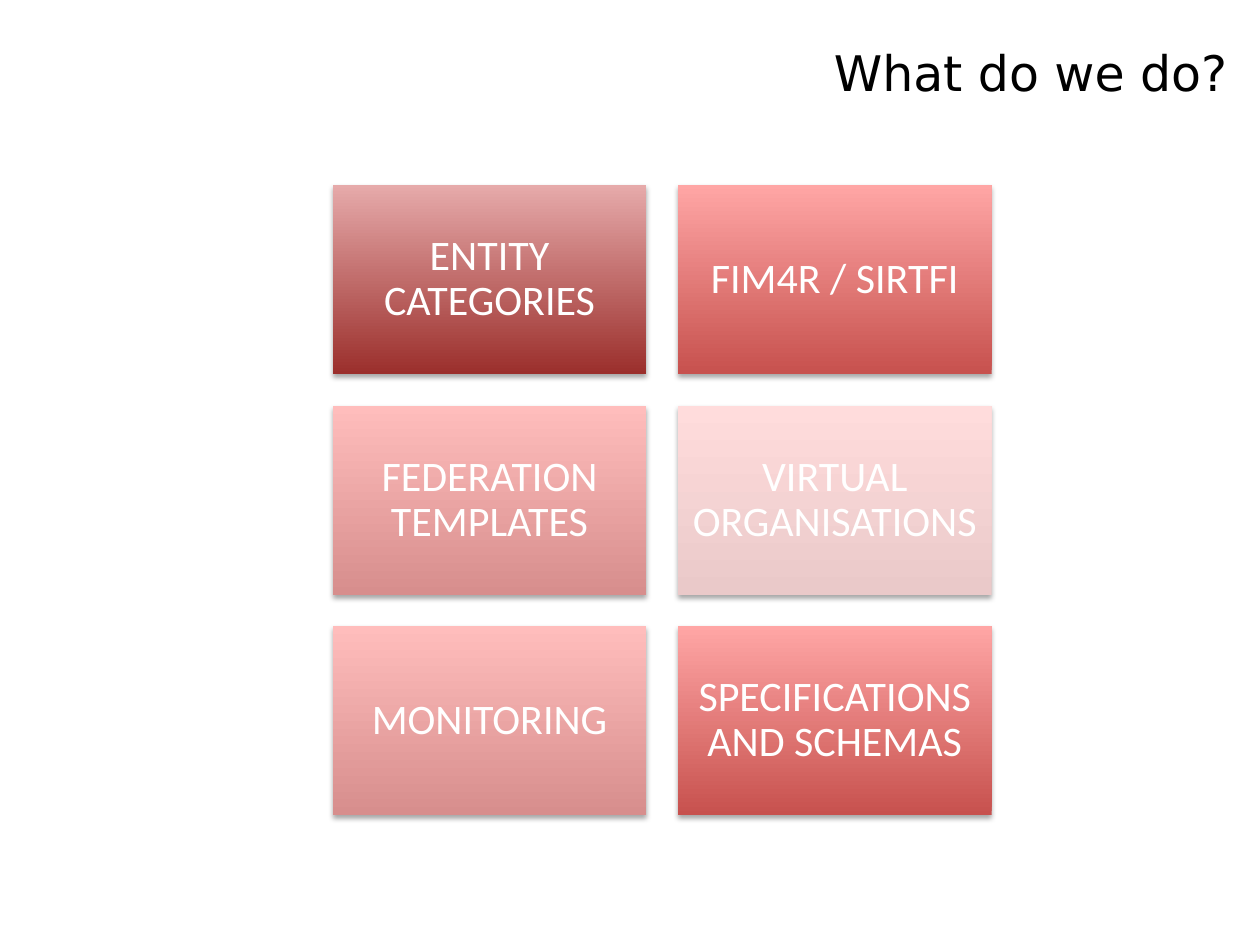
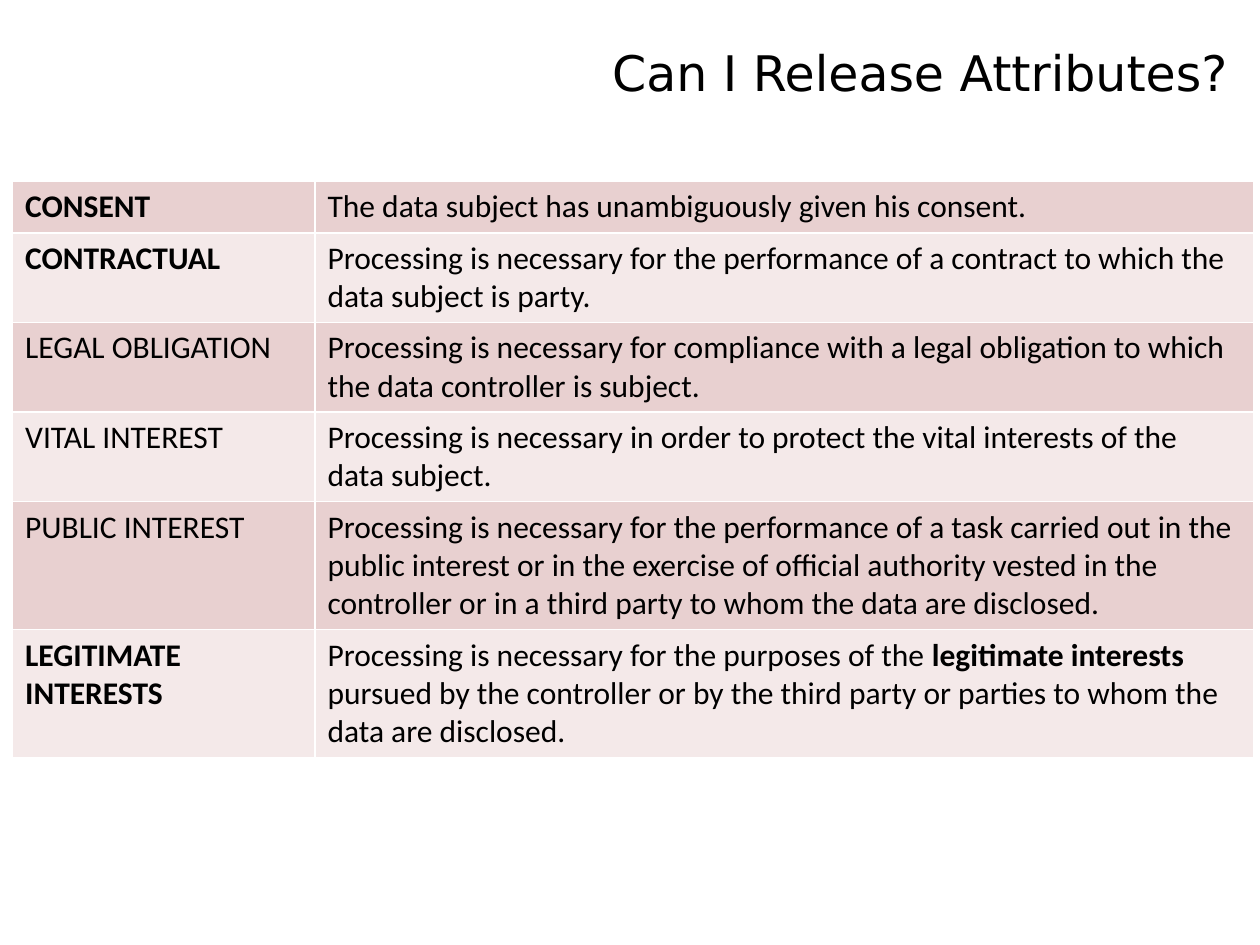
from dataclasses import dataclass

from lxml import etree
from pptx import Presentation
from pptx.dml.color import RGBColor
from pptx.enum.shapes import MSO_SHAPE
from pptx.enum.text import MSO_ANCHOR, MSO_AUTO_SIZE, PP_ALIGN
from pptx.oxml import parse_xml
from pptx.oxml.ns import nsdecls, qn
from pptx.util import Inches, Pt

RECTANGLE = MSO_SHAPE.RECTANGLE
TOP, MIDDLE = MSO_ANCHOR.TOP, MSO_ANCHOR.MIDDLE
CENTER, RIGHT = PP_ALIGN.CENTER, PP_ALIGN.RIGHT
NO_AUTOFIT = MSO_AUTO_SIZE.NONE

TITLE_FONT, BODY_FONT = "DejaVu Sans", "Calibri"
BLACK, WHITE = "000000", "FFFFFF"
ROW_FILLS = ("E8D0D0", "F4E9E9")

DARK = ("9B2F2C", "E6AAAA")
STRONG = ("C7514E", "FFA6A5")
SOFT = ("D78E8D", "FFBDBC")
PALE = ("EAC9C9", "FFDCDC")

TILE_COLUMNS = 2
TILE_LEFT, TILE_TOP = 2.64, 1.47
TILE_WIDTH, TILE_HEIGHT, TILE_GAP = 2.49, 1.5, 0.25


@dataclass
class Tile:
    text: str
    gradient: tuple[str, str]


@dataclass
class Ground:
    name: str
    meaning: str
    bold_name: bool = False
    bold_phrase: str = ""


TILES = [
    Tile("ENTITY CATEGORIES", DARK),
    Tile("FIM4R / SIRTFI", STRONG),
    Tile("FEDERATION TEMPLATES", SOFT),
    Tile("VIRTUAL ORGANISATIONS", PALE),
    Tile("MONITORING", SOFT),
    Tile("SPECIFICATIONS AND SCHEMAS", STRONG),
]

GROUNDS = [
    Ground("CONSENT", "The data subject has unambiguously given his consent.", True),
    Ground("CONTRACTUAL", "Processing is necessary for the performance of a contract "
           "to which the data subject is party.", True),
    Ground("LEGAL OBLIGATION", "Processing is necessary for compliance with a legal "
           "obligation to which the data controller is subject."),
    Ground("VITAL INTEREST", "Processing is necessary in order to protect the vital "
           "interests of the data subject."),
    Ground("PUBLIC INTEREST", "Processing is necessary for the performance of a task "
           "carried out in the public interest or in the exercise of official authority "
           "vested in the controller or in a third party to whom the data are disclosed."),
    Ground("LEGITIMATE INTERESTS", "Processing is necessary for the purposes of the "
           "legitimate interests pursued by the controller or by the third party or "
           "parties to whom the data are disclosed.", True, "legitimate interests"),
]


def rgb(value: str) -> RGBColor:
    return RGBColor.from_string(value)


def set_font(p, name: str, size: int, color: str) -> None:
    p.font.name = name
    p.font.size = Pt(size)
    p.font.color.rgb = rgb(color)


def add_slide(prs, title: str):
    s = prs.slides.add_slide(prs.slide_layouts[5])
    sp = s.shapes.title
    sp.left, sp.top = Inches(2.83), Inches(0.29)
    sp.width, sp.height = Inches(7.01), Inches(1.25)
    tf = sp.text_frame
    tf.text = title
    tf.word_wrap = True
    tf.auto_size = NO_AUTOFIT
    tf.vertical_anchor = TOP
    p = tf.paragraphs[0]
    p.alignment = RIGHT
    set_font(p, TITLE_FONT, 28, BLACK)
    return s


def add_shadow(sp) -> None:
    sp.shadow.inherit = False
    effects = sp._element.spPr.find(qn("a:effectLst"))
    effects.append(parse_xml(
        f'<a:outerShdw {nsdecls("a")} blurRad="{Pt(3.1)}" dist="{Pt(1.8)}" '
        f'dir="5400000" rotWithShape="0"><a:srgbClr val="{BLACK}">'
        '<a:alpha val="35000"/></a:srgbClr></a:outerShdw>'))


def add_tile(s, tile: Tile, left: float, top: float) -> None:
    sp = s.shapes.add_shape(RECTANGLE, Inches(left), Inches(top),
                            Inches(TILE_WIDTH), Inches(TILE_HEIGHT))
    sp.fill.gradient()
    sp.fill.gradient_angle = 90
    for stop, color, position in zip(sp.fill.gradient_stops, tile.gradient, (0, 1)):
        stop.color.rgb = rgb(color)
        stop.position = position
    sp.line.fill.background()
    add_shadow(sp)
    tf = sp.text_frame
    tf.text = tile.text
    tf.word_wrap = True
    tf.vertical_anchor = MIDDLE
    tf.margin_left = tf.margin_right = tf.margin_top = tf.margin_bottom = Inches(0.1)
    p = tf.paragraphs[0]
    p.alignment = CENTER
    p.line_spacing = 0.9
    set_font(p, BODY_FONT, 24, WHITE)


def set_borders(cell, color: str) -> None:
    tc_pr = cell._tc.get_or_add_tcPr()
    for index, side in enumerate(("lnL", "lnR", "lnT", "lnB")):
        line = etree.Element(qn(f"a:{side}"), w=str(Pt(1)))
        fill = etree.SubElement(line, qn("a:solidFill"))
        etree.SubElement(fill, qn("a:srgbClr"), val=color)
        tc_pr.insert(index, line)


def fill_cell(cell, text: str, fill: str, bold: bool, bold_phrase: str = "") -> None:
    cell.fill.solid()
    cell.fill.fore_color.rgb = rgb(fill)
    set_borders(cell, WHITE)
    p = cell.text_frame.paragraphs[0]
    before, phrase, after = text.partition(bold_phrase) if bold_phrase else (text, "", "")
    for part, is_bold in ((before, bold), (phrase, True), (after, bold)):
        if part:
            r = p.add_run()
            r.text = part
            r.font.bold = is_bold
    set_font(p, BODY_FONT, 18, BLACK)


def add_activities(prs) -> None:
    s = add_slide(prs, "What do we do?")
    for index, tile in enumerate(TILES):
        row, column = divmod(index, TILE_COLUMNS)
        add_tile(s, tile, TILE_LEFT + column * (TILE_WIDTH + TILE_GAP),
                 TILE_TOP + row * (TILE_HEIGHT + TILE_GAP))


def add_release_grounds(prs) -> None:
    s = add_slide(prs, "Can I Release Attributes?")
    frame = s.shapes.add_table(len(GROUNDS), 2, Inches(0.1), Inches(1.44),
                               Inches(9.85), Inches(4.51))
    table = frame.table
    table.first_row = False
    table.columns[0].width = Inches(2.4)
    table.columns[1].width = Inches(7.45)
    for index, ground in enumerate(GROUNDS):
        table.rows[index].height = Inches(0.41)
        fill = ROW_FILLS[index % 2]
        fill_cell(table.cell(index, 0), ground.name, fill, ground.bold_name)
        fill_cell(table.cell(index, 1), ground.meaning, fill, False, ground.bold_phrase)
    frame.height = Inches(4.51)


def main() -> None:
    prs = Presentation()
    prs.slide_width, prs.slide_height = Inches(10), Inches(7.5)
    add_activities(prs)
    add_release_grounds(prs)
    prs.save("out.pptx")


if __name__ == "__main__":
    main()
